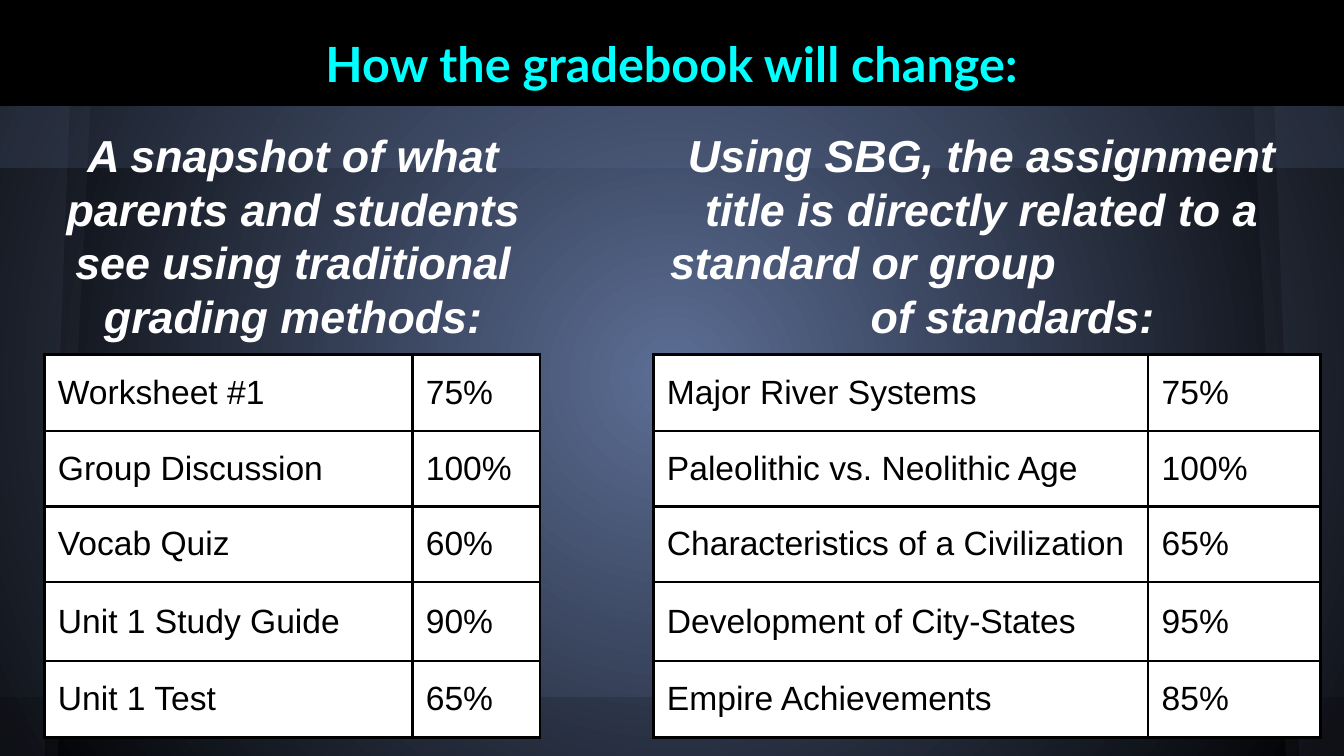
from pptx import Presentation
from pptx.dml.color import RGBColor
from pptx.enum.shapes import MSO_SHAPE
from pptx.enum.text import MSO_ANCHOR, PP_ALIGN
from pptx.oxml import parse_xml
from pptx.oxml.ns import nsdecls, qn
from pptx.util import Pt

PX = 5715  # EMU per px, 160 px to the inch
W, H = 1600, 900
INSET = 16
ROW_HEIGHTS = [91, 90, 90, 94, 91]

TRADITIONAL = [("Worksheet #1", "75%"), ("Group Discussion", "100%"),
               ("Vocab Quiz", "60%"), ("Unit 1 Study Guide", "90%"),
               ("Unit 1 Test", "65%")]
STANDARDS = [("Major River Systems", "75%"),
             ("Paleolithic vs. Neolithic Age", "100%"),
             ("Characteristics of a Civilization", "65%"),
             ("Development of City-States", "95%"),
             ("Empire Achievements", "85%")]


def color(value):
    return RGBColor.from_string(value)


def px(*values):
    return [v * PX for v in values]


def style(p, font, size, ink, bold=False, italic=False):
    for r in p.runs:
        r.font.name, r.font.size = font, Pt(size)
        r.font.color.rgb = color(ink)
        r.font.bold, r.font.italic = bold, italic


def set_insets(box):
    box.margin_left = box.margin_right = INSET * PX
    box.margin_top = box.margin_bottom = INSET * PX


def paint(sp, fill, opacity):
    sp.shadow.inherit = False
    sp.line.fill.background()
    sp.fill.solid()
    sp.fill.fore_color.rgb = color(fill)
    clr = sp.element.spPr.find(qn("a:solidFill"))[0]
    clr.append(parse_xml(f'<a:alpha {nsdecls("a")} val="{opacity * 1000}"/>'))


def add_background(s):
    # Radial gradient from the centre
    fill = s.background.fill
    fill.gradient()
    for stop, position, value in zip(fill.gradient_stops, (0, 1), ("5C6E95", "000000")):
        stop.position = position
        stop.color.rgb = color(value)
    grad = next(s.element.iter(qn("a:gradFill")))
    grad.replace(grad.find(qn("a:lin")), parse_xml(
        f'<a:path {nsdecls("a")} path="circle">'
        '<a:fillToRect l="50000" t="50000" r="50000" b="50000"/></a:path>'))


def add_band(s, y, h, fill, opacity):
    sp = s.shapes.add_shape(MSO_SHAPE.RECTANGLE, *px(0, y, W, h))
    paint(sp, fill, opacity)


def add_side_panel(s, edge, direction, top_w, bottom_w, fill):
    builder = s.shapes.build_freeform(edge, 0, scale=PX)
    builder.add_line_segments([(edge + direction * top_w, 0),
                               (edge + direction * bottom_w, H), (edge, H)])
    paint(builder.convert_to_shape(), fill, 10)


def add_title(s, x, y, w, h):
    sp = s.shapes.title
    sp.element.getparent().append(sp.element)  # in front of the backdrop
    sp.left, sp.top, sp.width, sp.height = px(x, y, w, h)
    sp.fill.solid()
    sp.fill.fore_color.rgb = color("000000")
    tf = sp.text_frame
    tf.text = "How the gradebook will change:"
    tf.vertical_anchor = MSO_ANCHOR.BOTTOM
    set_insets(tf)
    p = tf.paragraphs[0]
    p.alignment = PP_ALIGN.CENTER
    style(p, "Lato", 26, "00FFFF", bold=True)


def add_heading(s, x, y, w, h, lines):
    """Each line is (text, alignment, left indent)."""
    tf = s.shapes.add_textbox(*px(x, y, w, h)).text_frame
    tf.word_wrap = True
    set_insets(tf)
    tf.text = "\n".join(text for text, _, _ in lines)
    for p, (_, alignment, indent) in zip(tf.paragraphs, lines):
        p.alignment = alignment
        if indent:
            p._p.get_or_add_pPr().set("marL", str(indent * PX))
        style(p, "Arial", 24, "FFFFFF", bold=True, italic=True)


def add_borders(cell):
    tcPr = cell._tc.get_or_add_tcPr()
    for i, side in enumerate(("lnL", "lnR", "lnT", "lnB")):
        tcPr.insert(i, parse_xml(
            f'<a:{side} {nsdecls("a")} w="{Pt(1.5)}"><a:solidFill>'
            f'<a:srgbClr val="000000"/></a:solidFill></a:{side}>'))


def add_grades(s, x, y, col_widths, grades):
    frame = s.shapes.add_table(len(grades), len(col_widths),
                               *px(x, y, sum(col_widths), sum(ROW_HEIGHTS)))
    table = frame.table
    table.first_row = table.horz_banding = False
    for column, width in zip(table.columns, px(*col_widths)):
        column.width = width
    for row, height, texts in zip(table.rows, px(*ROW_HEIGHTS), grades):
        row.height = height
        for cell, text in zip(row.cells, texts):
            cell.text = text
            cell.vertical_anchor = MSO_ANCHOR.MIDDLE
            set_insets(cell)
            cell.fill.solid()
            cell.fill.fore_color.rgb = color("FFFFFF")
            add_borders(cell)
            style(cell.text_frame.paragraphs[0], "Arial", 18, "000000")


def main():
    prs = Presentation()
    prs.slide_width, prs.slide_height = px(W, H)
    s = prs.slides.add_slide(prs.slide_layouts[5])

    # Backdrop
    add_background(s)
    add_band(s, 0, 200, "5C6E95", 20)
    for edge, direction in ((0, 1), (W, -1)):
        add_side_panel(s, edge, direction, 114, 69, "5A6378")
        add_side_panel(s, edge, direction, 88, 53, "5C6E95")
    add_band(s, 830, 70, "000000", 15)

    add_title(s, 0, 0, W, 126)

    # Traditional grading
    add_heading(s, 13, 136, 672, 274, [
        ("A snapshot of what parents and students see using traditional "
         "grading methods:", PP_ALIGN.CENTER, 0)])
    add_grades(s, 53, 422, [438, 152], TRADITIONAL)

    # Standards-based grading
    add_heading(s, 778, 136, 781, 259, [
        ("Using SBG, the assignment title is directly related to a", PP_ALIGN.CENTER, 0),
        ("standard or group", PP_ALIGN.LEFT, 4),
        ("of standards:", PP_ALIGN.CENTER, 74)])
    add_grades(s, 778, 422, [589, 205], STANDARDS)

    prs.save("out.pptx")


if __name__ == "__main__":
    main()
